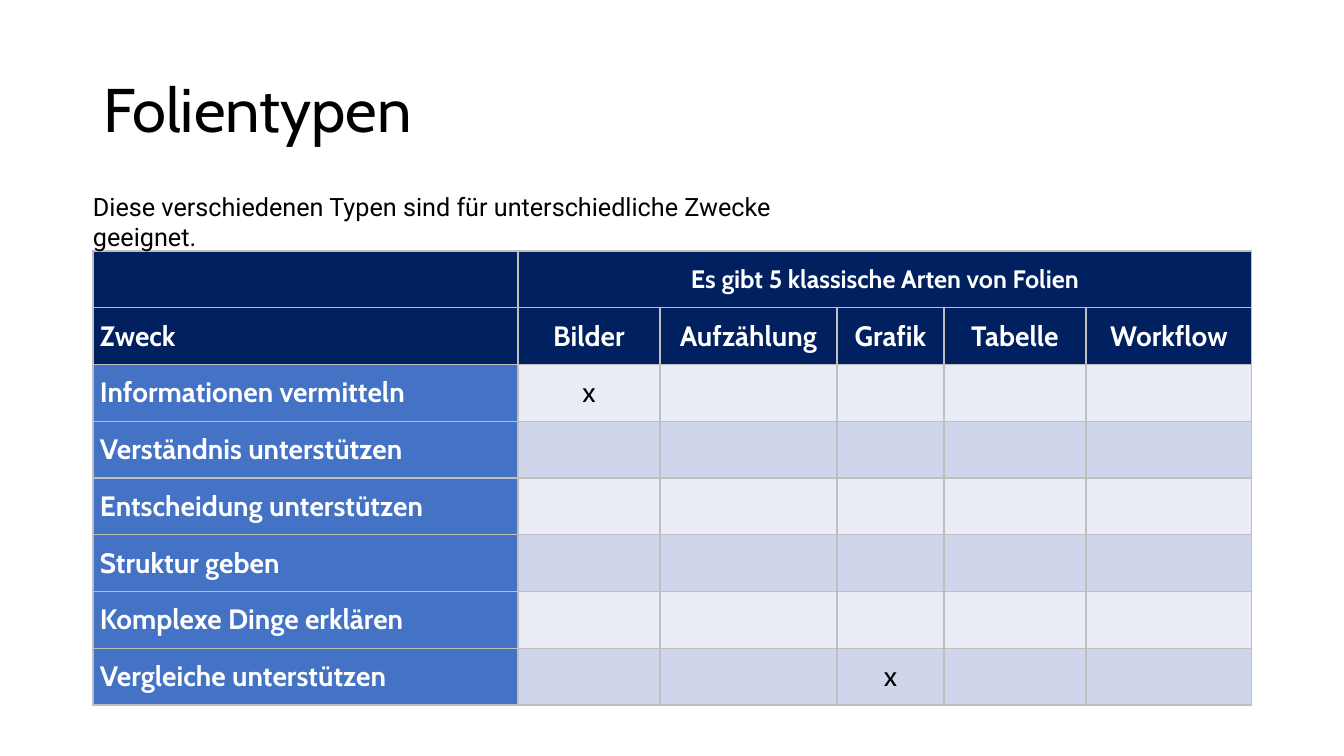
from lxml.etree import SubElement
from pptx import Presentation
from pptx.dml.color import RGBColor
from pptx.enum.text import MSO_ANCHOR, MSO_AUTO_SIZE, PP_ALIGN
from pptx.oxml.ns import qn
from pptx.util import Emu, Pt

TITLE = "Folientypen"
INTRO = "Diese verschiedenen Typen sind für unterschiedliche Zwecke geeignet."
TABLE_HEAD = "Es gibt 5 klassische Arten von Folien"
SLIDE_TYPES = ["Bilder", "Aufzählung", "Grafik", "Tabelle", "Workflow"]
# Each purpose with the slide types marked for it
PURPOSES = [
    ("Informationen vermitteln", ["Bilder"]),
    ("Verständnis unterstützen", []),
    ("Entscheidung unterstützen", []),
    ("Struktur geben", []),
    ("Komplexe Dinge erklären", []),
    ("Vergleiche unterstützen", ["Grafik"]),
]
COLORS = {
    "text": "000000", "light": "FFFFFF", "head": "002060", "purpose": "4472C4",
    "band_odd": "E9EBF5", "band_even": "CFD5EA", "border": "BFBFBF",
}
LEFT, TOP, HEIGHT = 93, 251, 454
COL_WIDTHS = [425, 142, 177, 107, 142, 166]
CELL_MARGIN = 7


def px(n):
    return Emu(round(n * 914400 / 100.8))


def rgb(name):
    return RGBColor.from_string(COLORS[name])


def add_run(p, text, size, font="Cabin", color="text", bold=False):
    r = p.add_run()
    r.text = text
    r.font.size, r.font.name, r.font.bold = Pt(size), font, bold
    r.font.color.rgb = rgb(color)


def add_borders(cell):
    tc_pr = cell._tc.get_or_add_tcPr()
    for i, side in enumerate(["a:lnL", "a:lnR", "a:lnT", "a:lnB"]):
        ln = SubElement(tc_pr, qn(side), w=str(Pt(1)))
        fill = SubElement(ln, qn("a:solidFill"))
        SubElement(fill, qn("a:srgbClr"), val=COLORS["border"])
        tc_pr.insert(i, ln)  # borders must precede the fill


def fill_cell(cell, text, fill, color, bold, size, align):
    cell.fill.solid()
    cell.fill.fore_color.rgb = rgb(fill)
    add_borders(cell)
    cell.vertical_anchor = MSO_ANCHOR.MIDDLE
    cell.margin_left = cell.margin_right = px(CELL_MARGIN)
    cell.margin_top = cell.margin_bottom = 0
    if text:
        p = cell.text_frame.paragraphs[0]
        p.alignment = align
        add_run(p, text, size, color=color, bold=bold)


def add_title(slide):
    sp = slide.shapes.title
    sp.left, sp.top, sp.width, sp.height = px(LEFT), px(40), px(1159), px(146)
    tf = sp.text_frame
    tf.auto_size = MSO_AUTO_SIZE.NONE
    tf.vertical_anchor = MSO_ANCHOR.MIDDLE
    p = tf.paragraphs[0]
    p.alignment, p.line_spacing = PP_ALIGN.LEFT, 0.9
    add_run(p, TITLE, 44)


def add_purpose_table(slide):
    rows = [["", TABLE_HEAD, "", "", "", ""], ["Zweck"] + SLIDE_TYPES]
    for purpose, marked in PURPOSES:
        rows.append([purpose] + ["x" if t in marked else "" for t in SLIDE_TYPES])

    table = slide.shapes.add_table(len(rows), len(COL_WIDTHS), px(LEFT), px(TOP),
                                   px(sum(COL_WIDTHS)), px(HEIGHT)).table
    table.first_row = table.horz_banding = False
    for col, width in zip(table.columns, COL_WIDTHS):
        col.width = px(width)
    for row in table.rows:
        row.height = px(HEIGHT / len(rows))
    table.cell(0, 1).merge(table.cell(0, len(COL_WIDTHS) - 1))

    for i, texts in enumerate(rows):
        for j, text in enumerate(texts):
            is_label = i < 2 or j == 0
            if i < 2:
                fill = "head"
            elif j == 0:
                fill = "purpose"
            else:
                fill = "band_even" if i % 2 else "band_odd"
            fill_cell(table.cell(i, j), text, fill,
                      color="light" if is_label else "text", bold=is_label,
                      size=18 if i == 0 else 20,
                      align=PP_ALIGN.CENTER if j else PP_ALIGN.LEFT)


def add_intro(slide):
    tf = slide.shapes.add_textbox(px(83), px(186), px(800), px(40)).text_frame
    tf.word_wrap = True
    add_run(tf.paragraphs[0], INTRO, 18, font="Roboto")


def main():
    prs = Presentation()
    prs.slide_width, prs.slide_height = px(1344), px(756)
    slide = prs.slides.add_slide(prs.slide_layouts[5])
    add_title(slide)
    add_purpose_table(slide)
    add_intro(slide)
    prs.save("out.pptx")


if __name__ == "__main__":
    main()
